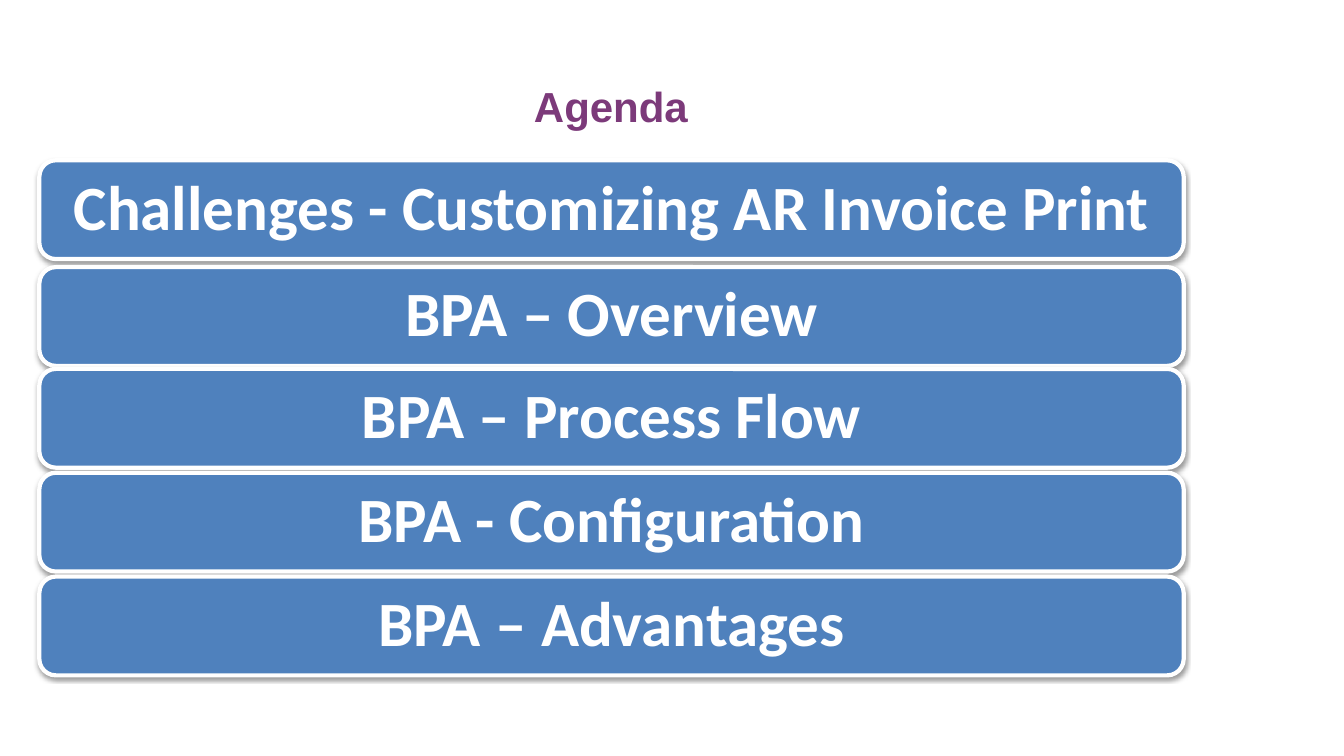
import pptx
import pptx.dml.color
import pptx.enum.shapes
import pptx.enum.text
import pptx.oxml
import pptx.oxml.ns
import pptx.util

Inches = pptx.util.Inches
Pt = pptx.util.Pt
RGB = pptx.dml.color.RGBColor.from_string
MIDDLE = pptx.enum.text.MSO_ANCHOR.MIDDLE
CENTER = pptx.enum.text.PP_ALIGN.CENTER

COLORS = {"title": "7C3A7A", "bar": "4F81BD", "light": "FFFFFF", "shadow": "000000"}

SHADOW = (
    f'<a:outerShdw {pptx.oxml.ns.nsdecls("a")} blurRad="{Pt(3.1)}" dist="{Pt(1.6)}" '
    'dir="5400000" rotWithShape="0">'
    f'<a:srgbClr val="{COLORS["shadow"]}"><a:alpha val="38000"/></a:srgbClr>'
    "</a:outerShdw>"
)

AGENDA = [
    (1.59, "Challenges - Customizing AR Invoice Print"),
    (2.65, "BPA – Overview"),
    (3.66, "BPA – Process Flow"),
    (4.69, "BPA - Configuration"),
    (5.72, "BPA – Advantages"),
]


def format_text(para, font_name, size, color):
    para.alignment = CENTER
    para.font.name = font_name
    para.font.size = Pt(size)
    para.font.bold = True
    para.font.color.rgb = RGB(color)


deck = pptx.Presentation()
deck.slide_width = Inches(13.33)
deck.slide_height = Inches(7.5)
page = deck.slides.add_slide(deck.slide_layouts[5])

# Title
title = page.shapes.title
title.left, title.top = Inches(0.38), Inches(0.22)
title.width, title.height = Inches(11.36), Inches(1.13)
title.text_frame.text = "Agenda"
title.text_frame.vertical_anchor = pptx.enum.text.MSO_ANCHOR.BOTTOM
format_text(title.text_frame.paragraphs[0], "Arial", 30, COLORS["title"])

# Agenda bars
for top, topic in AGENDA:
    bar = page.shapes.add_shape(
        pptx.enum.shapes.MSO_SHAPE.ROUNDED_RECTANGLE,
        Inches(0.39), Inches(top), Inches(11.35), Inches(0.98),
    )
    bar.fill.solid()
    bar.fill.fore_color.rgb = RGB(COLORS["bar"])
    bar.line.color.rgb = RGB(COLORS["light"])
    bar.line.width = Pt(3)

    # Soft shadow below the bar
    bar.shadow.inherit = False
    effects = bar._element.spPr.find(pptx.oxml.ns.qn("a:effectLst"))
    effects.append(pptx.oxml.parse_xml(SHADOW))

    frame = bar.text_frame
    frame.word_wrap = True
    frame.vertical_anchor = MIDDLE
    frame.margin_left = frame.margin_right = Inches(0.19)
    frame.margin_top = frame.margin_bottom = Inches(0.09)
    frame.text = topic
    para = frame.paragraphs[0]
    para.line_spacing = 0.9
    format_text(para, "Calibri", 45, COLORS["light"])

deck.save("out.pptx")
